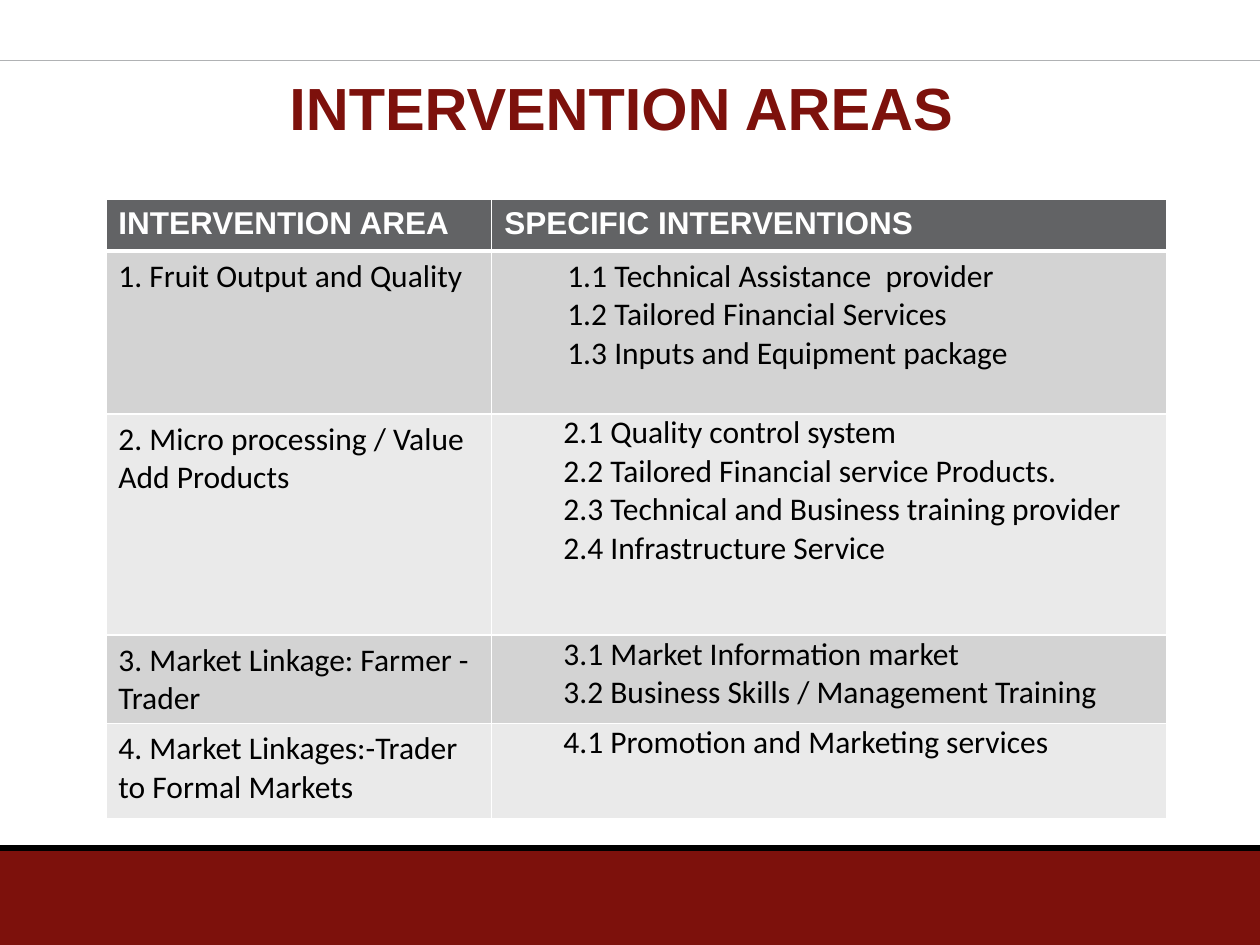
from lxml import etree
from pptx import Presentation
from pptx.dml.color import RGBColor
from pptx.enum.shapes import MSO_CONNECTOR, MSO_SHAPE
from pptx.enum.text import MSO_ANCHOR, PP_ALIGN
from pptx.oxml.ns import qn
from pptx.util import Pt

STRAIGHT = MSO_CONNECTOR.STRAIGHT
RECTANGLE = MSO_SHAPE.RECTANGLE
MIDDLE = MSO_ANCHOR.MIDDLE
CENTER = PP_ALIGN.CENTER

BLANK_LAYOUT = 6
WIDTH, HEIGHT = 720, 540
COLORS = {
    "maroon": "7D110C",
    "rule": "B0B2B4",
    "black": "000000",
    "white": "FFFFFF",
    "header": "626365",
    "dark_band": "D3D3D3",
    "light_band": "EAEAEA",
}
TITLE_FONT = {"name": "Arial", "size": Pt(34), "bold": True}
HEADER_FONT = {"name": "Arial", "size": Pt(18), "bold": True}
BODY_FONT = {"name": "Calibri", "size": Pt(18), "bold": False}
TIGHT_MARGINS = {
    "margin_left": Pt(5),
    "margin_top": Pt(0),
    "margin_right": Pt(5),
    "margin_bottom": Pt(0),
}
LIST_INDENT = {"marL": Pt(58.5), "indent": Pt(-22.5)}

COLUMN_WIDTHS = [220.5, 386]
ROW_HEIGHTS = [29.5, 93, 126.5, 50.5, 54.5]
HEADINGS = ["INTERVENTION AREA", "SPECIFIC INTERVENTIONS"]
INTERVENTIONS = [
    ("1. Fruit Output and Quality", [
        "1.1 Technical Assistance  provider",
        "1.2 Tailored Financial Services",
        "1.3 Inputs and Equipment package",
    ]),
    ("2. Micro processing / Value Add Products", [
        "2.1 Quality control system",
        "2.2 Tailored Financial service Products.",
        "2.3 Technical and Business training provider",
        "2.4 Infrastructure Service",
    ]),
    ("3. Market Linkage: Farmer - Trader", [
        "3.1 Market Information market",
        "3.2 Business Skills / Management Training",
    ]),
    ("4. Market Linkages:-Trader to Formal Markets", [
        "4.1 Promotion and Marketing services",
    ]),
]


def rgb(color):
    return RGBColor.from_string(COLORS[color])


def set_attributes(target, values):
    for name, value in values.items():
        setattr(target, name, value)


def write_paragraph(paragraph, text, font, color):
    run = paragraph.add_run()
    run.text = text
    set_attributes(run.font, font)
    run.font.color.rgb = rgb(color)


def add_rule(slide, top, color, weight):
    """Draw a horizontal line across the full slide."""
    line = slide.shapes.add_connector(STRAIGHT, Pt(0), Pt(top), Pt(WIDTH), Pt(top))
    line.line.color.rgb = rgb(color)
    line.line.width = Pt(weight)
    etree.SubElement(line._element.spPr, qn("a:effectLst"))


def add_footer_band(slide):
    band = slide.shapes.add_shape(RECTANGLE, Pt(0), Pt(486), Pt(WIDTH), Pt(54))
    band.shadow.inherit = False
    band.fill.solid()
    band.fill.fore_color.rgb = rgb("maroon")
    band.line.fill.background()


def add_title(slide, text):
    box = slide.shapes.add_textbox(Pt(72), Pt(42), Pt(566), Pt(38))
    frame = box.text_frame
    set_attributes(frame, {"word_wrap": True, "vertical_anchor": MIDDLE})
    paragraph = frame.paragraphs[0]
    paragraph.alignment = CENTER
    write_paragraph(paragraph, text, TITLE_FONT, "maroon")


def set_borders(cell, weights):
    """Put white borders on a cell, ahead of its fill in the XML."""
    properties = cell._tc.get_or_add_tcPr()
    for position, (side, weight) in enumerate(weights.items()):
        border = etree.Element(qn(f"a:{side}"), w=str(Pt(weight)))
        fill = etree.SubElement(border, qn("a:solidFill"))
        etree.SubElement(fill, qn("a:srgbClr"), val=COLORS["white"])
        properties.insert(position, border)


def fill_cell(cell, lines, font, text_color, fill_color, is_list=False):
    cell.fill.solid()
    cell.fill.fore_color.rgb = rgb(fill_color)
    frame = cell.text_frame
    for index, line in enumerate(lines):
        paragraph = frame.add_paragraph() if index else frame.paragraphs[0]
        write_paragraph(paragraph, line, font, text_color)
        if is_list:
            paragraph.level = 1
            for name, value in LIST_INDENT.items():
                paragraph._p.get_or_add_pPr().set(name, str(value))


def add_interventions_table(slide):
    frame = slide.shapes.add_table(
        len(ROW_HEIGHTS), len(COLUMN_WIDTHS), Pt(60.5), Pt(114),
        Pt(sum(COLUMN_WIDTHS)), Pt(sum(ROW_HEIGHTS)))
    table = frame.table
    for column, width in zip(table.columns, COLUMN_WIDTHS):
        column.width = Pt(width)
    for row, height in zip(table.rows, ROW_HEIGHTS):
        row.height = Pt(height)

    for column, heading in enumerate(HEADINGS):
        fill_cell(table.cell(0, column), [heading], HEADER_FONT, "white", "header")
    for row, (area, services) in enumerate(INTERVENTIONS, start=1):
        band = "dark_band" if row % 2 else "light_band"
        fill_cell(table.cell(row, 0), [area], BODY_FONT, "black", band)
        services_cell = table.cell(row, 1)
        fill_cell(services_cell, services, BODY_FONT, "black", band, is_list=True)
        if row > 1:
            set_attributes(services_cell, TIGHT_MARGINS)

    for row in range(len(ROW_HEIGHTS)):
        weights = {"lnL": 1, "lnR": 1, "lnT": 3 if row == 1 else 1,
                   "lnB": 3 if row == 0 else 1}
        for column in range(len(COLUMN_WIDTHS)):
            set_borders(table.cell(row, column), weights)


def main():
    presentation = Presentation()
    presentation.slide_width = Pt(WIDTH)
    presentation.slide_height = Pt(HEIGHT)
    slide = presentation.slides.add_slide(presentation.slide_layouts[BLANK_LAYOUT])
    add_footer_band(slide)
    add_rule(slide, 34.5, "rule", 0.75)
    add_rule(slide, 484.5, "black", 3.75)
    add_title(slide, "INTERVENTION AREAS")
    add_interventions_table(slide)
    presentation.save("out.pptx")


if __name__ == "__main__":
    main()
